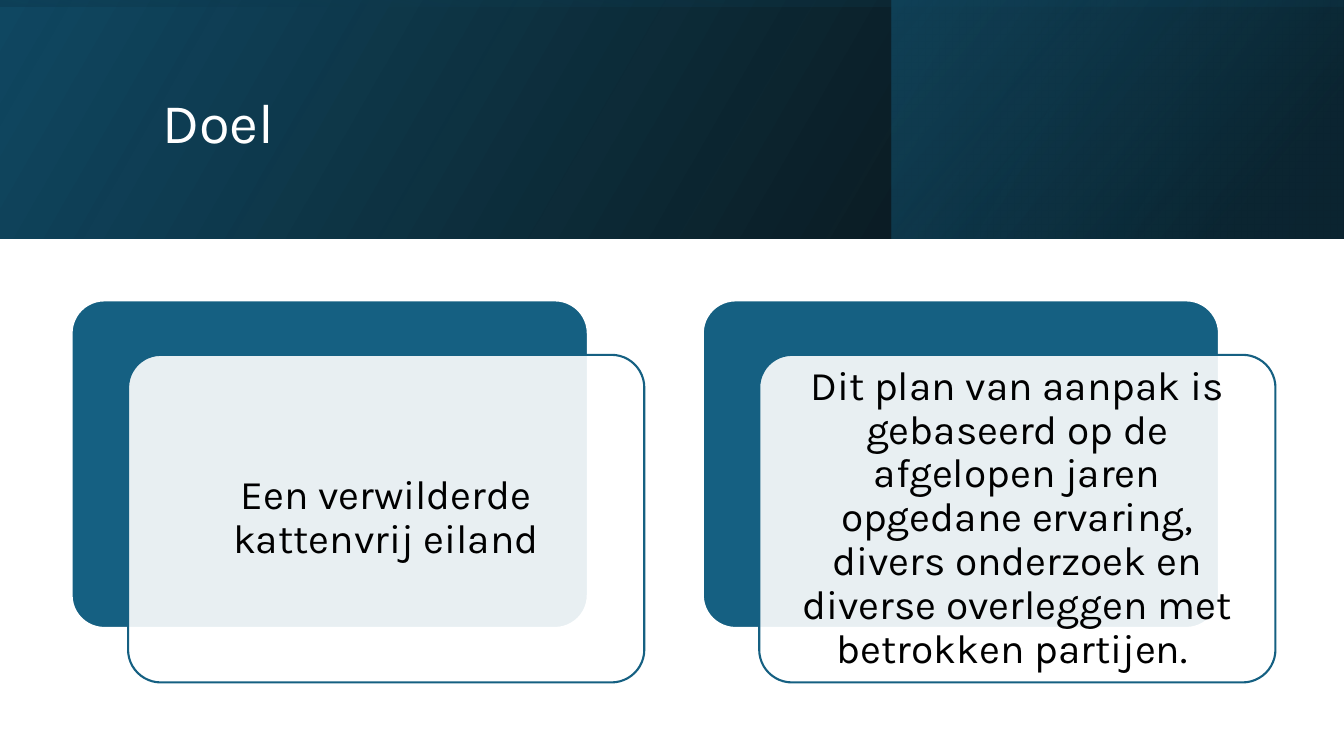
from dataclasses import dataclass

from lxml import etree
from pptx import Presentation
from pptx.dml.color import RGBColor
from pptx.enum.shapes import MSO_SHAPE
from pptx.enum.text import MSO_ANCHOR, PP_ALIGN
from pptx.oxml.ns import qn
from pptx.shapes.autoshape import Shape
from pptx.slide import Slide
from pptx.util import Inches, Pt

RECTANGLE = MSO_SHAPE.RECTANGLE
ROUNDED = MSO_SHAPE.ROUNDED_RECTANGLE
MIDDLE = MSO_ANCHOR.MIDDLE
LEFT = PP_ALIGN.LEFT
CENTER = PP_ALIGN.CENTER

COLORS = {
    "white": "FFFFFF",
    "black": "000000",
    "blue": "156082",
    "deep_blue": "104862",
    "night_blue": "0B3041",
}
FONT = "Karla"
SLIDE_WIDTH, SLIDE_HEIGHT = 13.33, 7.5
BANNER_HEIGHT = 2.37

CARD_WIDTH, CARD_HEIGHT = 5.12, 3.25
CARD_LEFT, CARD_TOP, CARD_STEP = 0.71, 2.98, 6.26
FRONT_SHIFT_X, FRONT_SHIFT_Y = 0.56, 0.54
CARD_INSET = 0.1


@dataclass(frozen=True)
class Box:
    left: float
    top: float
    width: float
    height: float

    def lengths(self) -> tuple:
        return tuple(Inches(n) for n in (self.left, self.top, self.width, self.height))


@dataclass(frozen=True)
class Stop:
    position: int
    color: str
    opacity: int


@dataclass(frozen=True)
class BannerLayer:
    box: Box
    stops: tuple[Stop, ...]
    angle: int
    rotation: int = 0


@dataclass(frozen=True)
class TextStyle:
    size: int
    color: str
    alignment: PP_ALIGN
    space_after: int
    margin_x: float
    margin_y: float


BANNER_LAYERS = (
    BannerLayer(
        Box(0, 0, SLIDE_WIDTH, BANNER_HEIGHT),
        (Stop(0, "black", 96), Stop(100, "deep_blue", 100)),
        330,
    ),
    BannerLayer(
        Box(8.84, 0, 4.48, BANNER_HEIGHT),
        (Stop(19, "night_blue", 68), Stop(100, "blue", 48)),
        320,
    ),
    BannerLayer(
        Box(5.48, -5.48, BANNER_HEIGHT, SLIDE_WIDTH),
        (Stop(23, "deep_blue", 16), Stop(99, "black", 45)),
        350,
        270,
    ),
)
TITLE_STYLE = TextStyle(40, "white", LEFT, 6, 0.1, 0.05)
CARD_STYLE = TextStyle(29, "black", CENTER, 0, 0.12, 0.12)
CARD_TEXTS = (
    "Een verwilderde kattenvrij eiland",
    "Dit plan van aanpak is gebaseerd op de afgelopen jaren opgedane ervaring, "
    "divers onderzoek en diverse overleggen met betrokken partijen. ",
)


def rgb(name: str) -> RGBColor:
    return RGBColor.from_string(COLORS[name])


def set_attributes(target: object, values: dict) -> None:
    for name, value in values.items():
        setattr(target, name, value)


def add_opacity(color_element: etree._Element, percent: int) -> None:
    etree.SubElement(color_element, qn("a:alpha"), val=str(percent * 1000))


def add_banner_layer(slide: Slide, layer: BannerLayer) -> None:
    shape = slide.shapes.add_shape(RECTANGLE, *layer.box.lengths())
    shape.shadow.inherit = False
    shape.rotation = layer.rotation
    shape.line.fill.background()
    properties = shape._element.spPr
    properties.find(qn("a:xfrm")).set("flipH", "1")
    gradient = etree.Element(qn("a:gradFill"), rotWithShape="1")
    stop_list = etree.SubElement(gradient, qn("a:gsLst"))
    for stop in layer.stops:
        entry = etree.SubElement(stop_list, qn("a:gs"), pos=str(stop.position * 1000))
        color = etree.SubElement(entry, qn("a:srgbClr"), val=COLORS[stop.color])
        add_opacity(color, stop.opacity)
    etree.SubElement(gradient, qn("a:lin"), ang=str(layer.angle * 60000), scaled="0")
    properties.find(qn("a:prstGeom")).addnext(gradient)


def add_panel(slide: Slide, box: Box, fill: str, line: str) -> Shape:
    shape = slide.shapes.add_shape(ROUNDED, *box.lengths())
    shape.shadow.inherit = False
    shape.adjustments[0] = 0.1
    shape.fill.solid()
    shape.fill.fore_color.rgb = rgb(fill)
    shape.line.color.rgb = rgb(line)
    shape.line.width = Pt(1.5)
    return shape


def add_text(slide: Slide, box: Box, text: str, style: TextStyle) -> None:
    frame = slide.shapes.add_textbox(*box.lengths()).text_frame
    set_attributes(frame, {
        "word_wrap": True,
        "vertical_anchor": MIDDLE,
        "margin_left": Inches(style.margin_x),
        "margin_right": Inches(style.margin_x),
        "margin_top": Inches(style.margin_y),
        "margin_bottom": Inches(style.margin_y),
    })
    paragraph = frame.paragraphs[0]
    set_attributes(paragraph, {
        "alignment": style.alignment,
        "line_spacing": 0.9,
        "space_after": Pt(style.space_after),
    })
    run = paragraph.add_run()
    run.text = text
    set_attributes(run.font, {"name": FONT, "size": Pt(style.size)})
    run.font.color.rgb = rgb(style.color)


def add_card(slide: Slide, left: float, text: str) -> None:
    back = Box(left, CARD_TOP, CARD_WIDTH, CARD_HEIGHT)
    front = Box(left + FRONT_SHIFT_X, CARD_TOP + FRONT_SHIFT_Y, CARD_WIDTH, CARD_HEIGHT)
    inner = Box(
        front.left + CARD_INSET,
        front.top + CARD_INSET,
        CARD_WIDTH - 2 * CARD_INSET,
        CARD_HEIGHT - 2 * CARD_INSET,
    )
    add_panel(slide, back, "blue", "white")
    panel = add_panel(slide, front, "white", "blue")
    fill_color = panel._element.spPr.find(qn("a:solidFill")).find(qn("a:srgbClr"))
    add_opacity(fill_color, 90)
    add_text(slide, inner, text, CARD_STYLE)


def main() -> None:
    presentation = Presentation()
    presentation.slide_width = Inches(SLIDE_WIDTH)
    presentation.slide_height = Inches(SLIDE_HEIGHT)
    slide = presentation.slides.add_slide(presentation.slide_layouts[6])
    for layer in BANNER_LAYERS:
        add_banner_layer(slide, layer)
    add_text(slide, Box(1.51, 0.38, 10.63, 1.72), "Doel", TITLE_STYLE)
    for index, text in enumerate(CARD_TEXTS):
        add_card(slide, CARD_LEFT + index * CARD_STEP, text)
    presentation.save("out.pptx")


if __name__ == "__main__":
    main()
